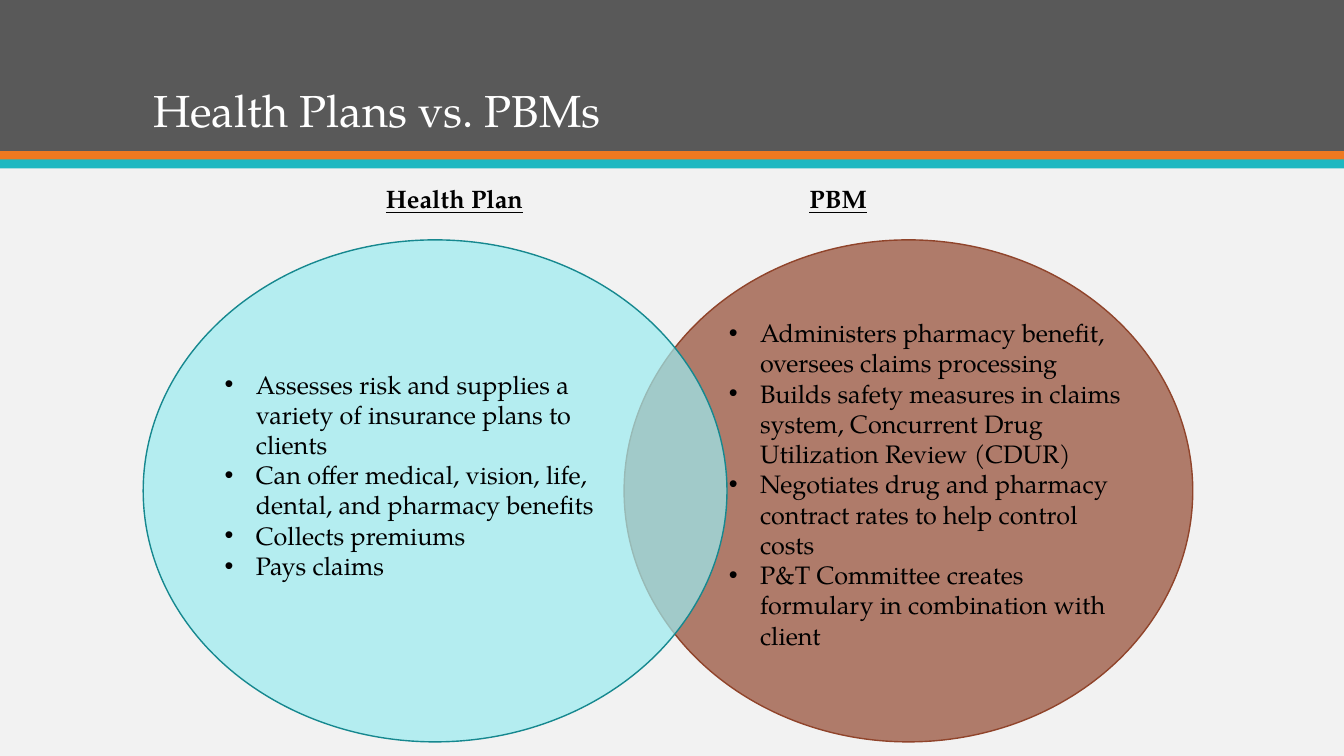
from dataclasses import dataclass

import pptx
import pptx.dml.color
import pptx.enum.shapes
import pptx.enum.text
import pptx.oxml
import pptx.oxml.ns
import pptx.util
from pptx.util import Inches

FONT = "TeX Gyre Pagella"
COLORS = {
    "background": "F2F2F2", "header": "595959", "orange": "EF7920", "teal": "1EB8C1",
    "white": "FFFFFF", "black": "000000",
    "plan": "9CEBF0", "plan_edge": "16888F", "pbm": "90442B", "pbm_edge": "90442B",
}
SHAPES = pptx.enum.shapes.MSO_SHAPE
ANCHORS = pptx.enum.text.MSO_ANCHOR


@dataclass
class Box:
    left: float
    top: float
    width: float
    height: float

    def lengths(self) -> list:
        return [Inches(n) for n in (self.left, self.top, self.width, self.height)]


@dataclass
class Band:
    box: Box
    color: str


@dataclass
class Side:
    oval: Box
    color: str
    opacity: int
    heading: str
    heading_box: Box
    points: list[str]
    points_box: Box


BANDS = [
    Band(Box(0, 0, 13.33, 1.5), "header"),
    Band(Box(0, 1.5, 13.33, 0.09), "orange"),
    Band(Box(0, 1.58, 13.33, 0.09), "teal"),
]

# The PBM oval lies behind the health plan oval
SIDES = [
    Side(Box(6.19, 2.38, 5.64, 4.98), "pbm", 68, "PBM", Box(7.93, 1.77, 2.99, 0.4), [
        "Administers pharmacy benefit, oversees claims processing",
        "Builds safety measures in claims system, Concurrent Drug Utilization Review (CDUR)",
        "Negotiates drug and pharmacy contract rates to help control costs",
        "P&T Committee creates formulary in combination with client",
    ], Box(7.13, 3.1, 4.09, 3.74)),
    Side(Box(1.42, 2.38, 5.79, 4.98), "plan", 71, "Health Plan", Box(3.73, 1.77, 1.75, 0.4), [
        "Assesses risk and supplies a variety of insurance plans to clients",
        "Can offer medical, vision, life, dental, and pharmacy benefits",
        "Collects premiums",
        "Pays claims",
    ], Box(2.13, 3.61, 3.9, 2.22)),
]


def rgb(name: str) -> pptx.dml.color.RGBColor:
    return pptx.dml.color.RGBColor.from_string(COLORS[name])


def add_band(slide, band: Band) -> None:
    stripe = slide.shapes.add_shape(SHAPES.RECTANGLE, *band.box.lengths())
    stripe.shadow.inherit = False
    stripe.fill.solid()
    stripe.fill.fore_color.rgb = rgb(band.color)
    stripe.line.fill.background()


def add_oval(slide, side: Side) -> None:
    oval = slide.shapes.add_shape(SHAPES.OVAL, *side.oval.lengths())
    oval.shadow.inherit = False
    oval.fill.solid()
    oval.fill.fore_color.rgb = rgb(side.color)
    color = oval.fill._xPr.find(".//" + pptx.oxml.ns.qn("a:srgbClr"))
    color.append(pptx.oxml.parse_xml(
        f'<a:alpha {pptx.oxml.ns.nsdecls("a")} val="{side.opacity * 1000}"/>'))
    oval.line.color.rgb = rgb(side.color + "_edge")
    oval.line.width = pptx.util.Pt(1)


def add_text(slide, box: Box, lines: list[str], size: int = 18, color: str = "black",
             anchor=ANCHORS.TOP, heading: bool = False) -> list:
    frame = slide.shapes.add_textbox(*box.lengths()).text_frame
    frame.word_wrap = True
    frame.vertical_anchor = anchor
    frame.text = "\n".join(lines)
    for paragraph in frame.paragraphs:
        font = paragraph.font
        font.name, font.size = FONT, pptx.util.Pt(size)
        font.color.rgb = rgb(color)
        font.bold = font.underline = heading
    return list(frame.paragraphs)


def add_bullet(paragraph) -> None:
    properties = paragraph._p.get_or_add_pPr()
    properties.set("marL", str(Inches(0.31)))
    properties.set("indent", str(Inches(-0.31)))
    bullet = ('<a:buFont {ns} typeface="Arial"/>', '<a:buChar {ns} char="•"/>')
    for position, xml in enumerate(bullet):
        properties.insert(position, pptx.oxml.parse_xml(
            xml.format(ns=pptx.oxml.ns.nsdecls("a"))))


def main() -> None:
    deck = pptx.Presentation()
    deck.slide_width, deck.slide_height = Inches(13.33), Inches(7.5)
    slide = deck.slides.add_slide(deck.slide_layouts[6])
    slide.background.fill.solid()
    slide.background.fill.fore_color.rgb = rgb("background")

    # Header
    for band in BANDS:
        add_band(slide, band)
    title = add_text(slide, Box(1.42, 0.28, 10.88, 1.13), ["Health Plans vs. PBMs"],
                     32, "white", ANCHORS.BOTTOM)
    title[0].line_spacing = 0.9

    # Overlapping ovals
    for side in SIDES:
        add_oval(slide, side)

    # Headings and bullet points
    for side in SIDES:
        add_text(slide, side.heading_box, [side.heading], heading=True)
        for point in add_text(slide, side.points_box, side.points):
            add_bullet(point)

    deck.save("out.pptx")


if __name__ == "__main__":
    main()
